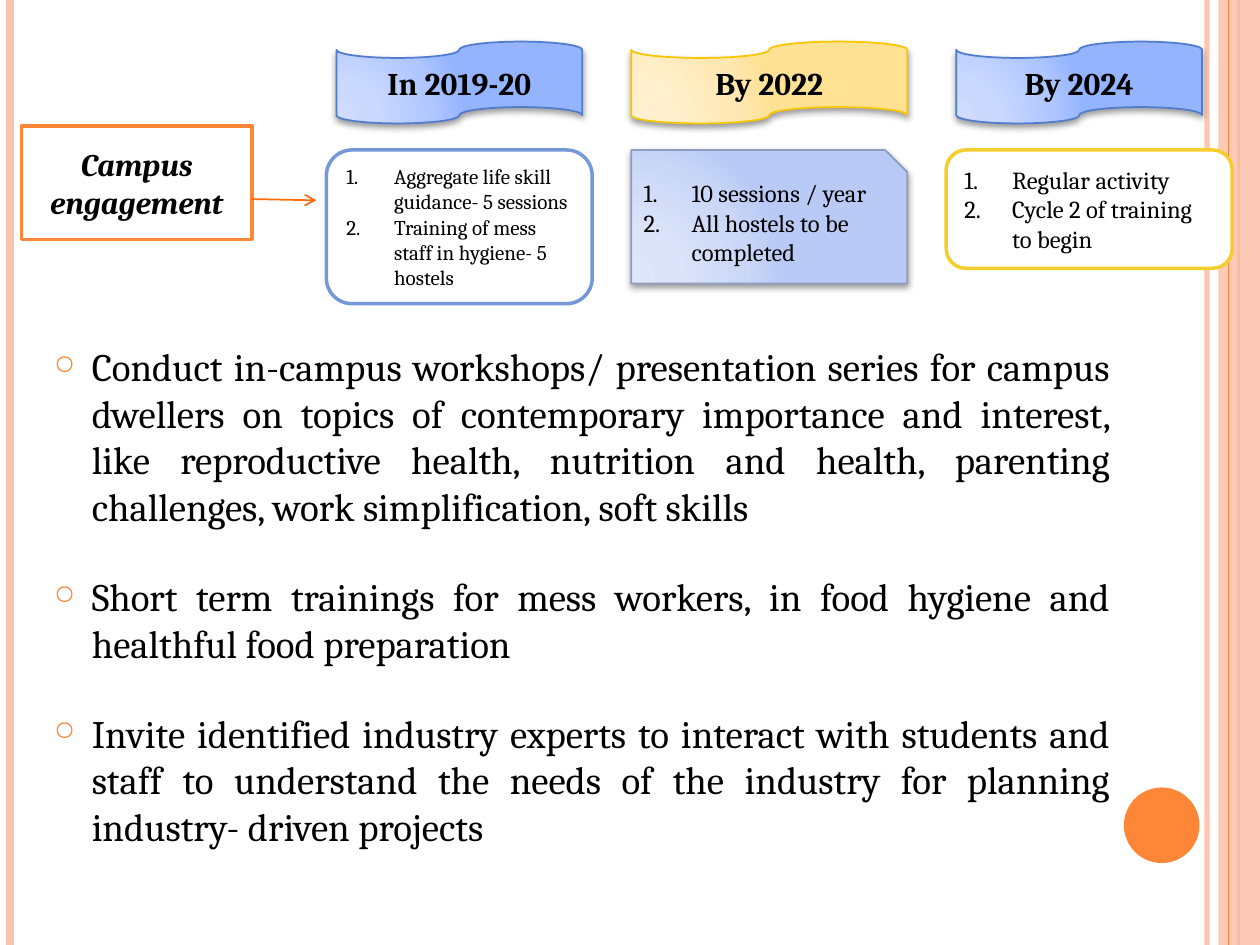
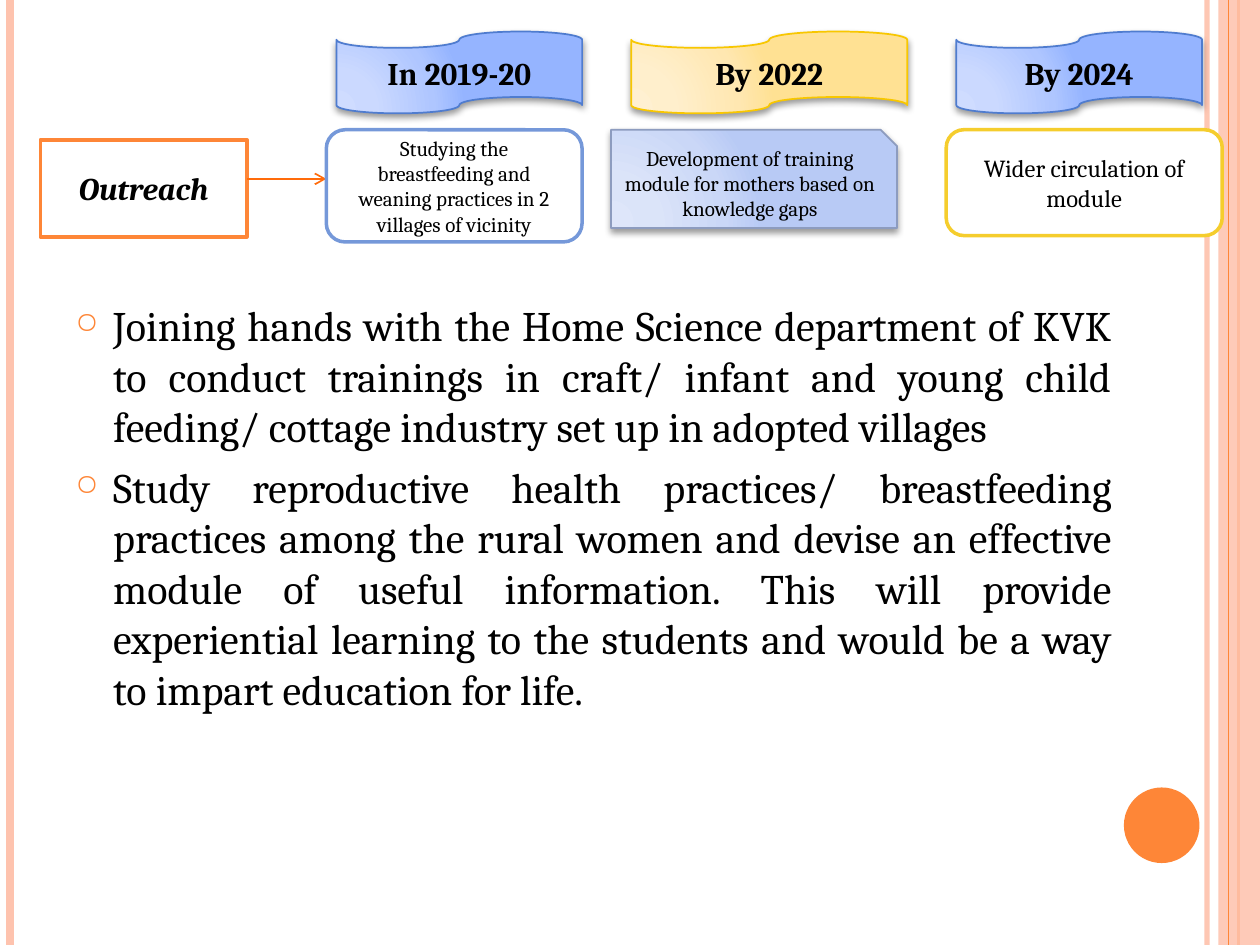
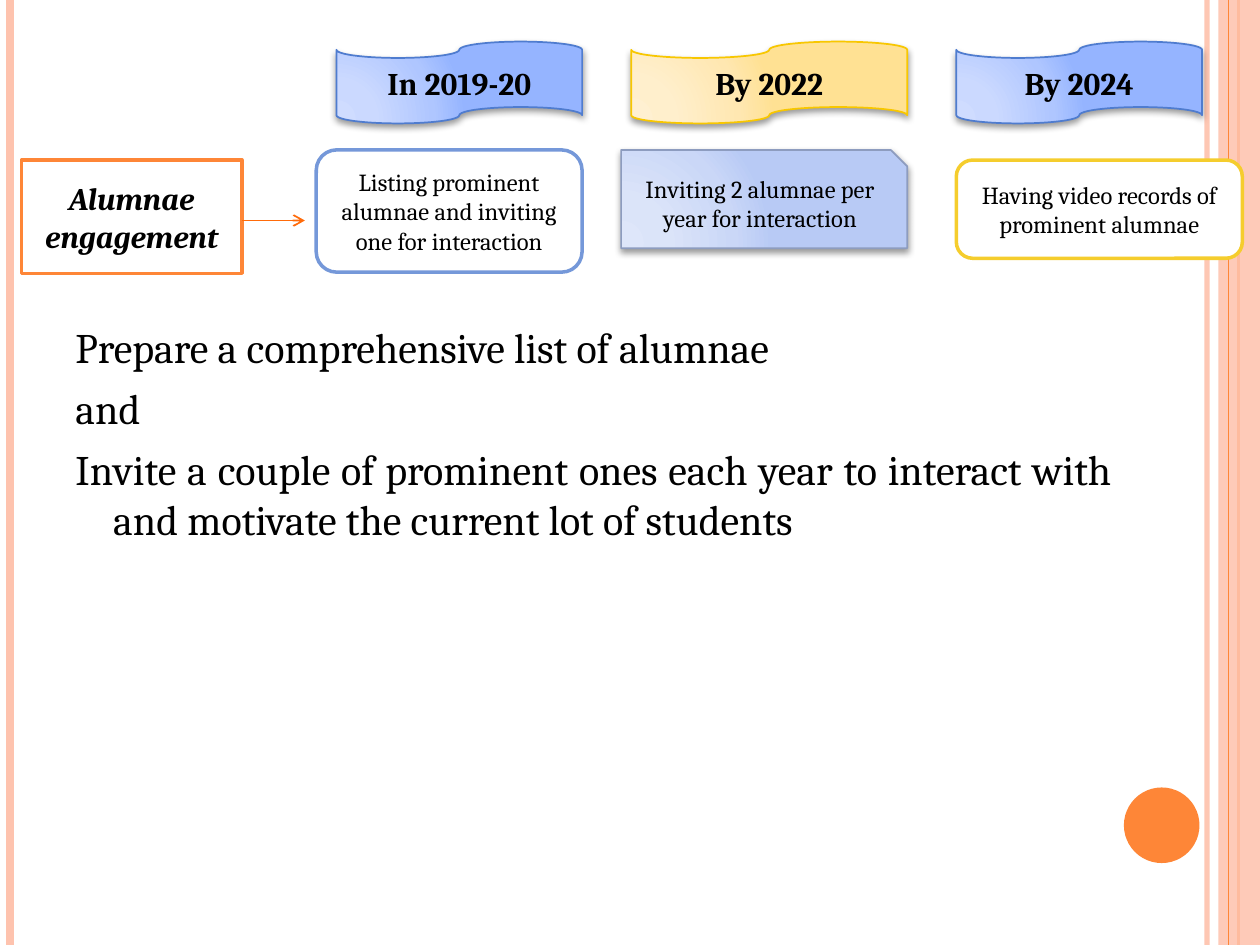
"""Build three slides of yearly plans: campus engagement, outreach, alumnae engagement."""
from lxml import etree
from pptx import Presentation
from pptx import util as u
from pptx.dml.color import RGBColor
from pptx.enum import shapes, text
from pptx.oxml import ns

PX = 9144
FONT = "Cambria"
BLACK, WHITE = "000000", "FFFFFF"
ORANGE, PEACH, ARROW = "FE8637", "FEC3AE", "FF6B0A"
GRADIENT_STOPS = (0, 30, 75, 100)
BLUE_TAPE = ("CFDCFF", "CBD9FF", "AFC6FF", "95B4FF")
GOLD_TAPE = ("FFF0D1", "FFEFCC", "FFE7B1", "FFE193")
BLUE_CARD = ("DEE6FA", "DBE4F9", "CAD7F7", "B8CAF5")
BANNERS = [
    ("In 2019-20", 267, 195, BLUE_TAPE, "4F7CCF"),
    ("By 2022", 501, 219, GOLD_TAPE, "F8C700"),
    ("By 2024", 759, 195, BLUE_TAPE, "4F7CCF"),
]
CARD_STYLES = [
    ("ROUNDED_RECTANGLE", WHITE, "7598D9", 2),
    ("SNIP_1_RECTANGLE", BLUE_CARD, "8D9CBF", 1),
    ("ROUNDED_RECTANGLE", WHITE, "F5CD2D", 2),
]


def px(*lengths):
    return [u.Emu(n * PX) for n in lengths]


def rgb(value):
    return RGBColor.from_string(value)


def add(parent, tag, **attrs):
    el = etree.SubElement(parent, ns.qn("a:" + tag))
    for name, value in attrs.items():
        el.set(name, str(value))
    return el


def add_alpha(parent, percent):
    color = next(parent.iter(ns.qn("a:srgbClr")))
    add(color, "alpha", val=percent * 1000)


def add_bullet(pPr, bullet):
    if bullet == "number":
        add(pPr, "buAutoNum", type="arabicPeriod")
    elif bullet:
        add(add(pPr, "buClr"), "srgbClr", val=ORANGE)
        add(pPr, "buSzPct", val=70000)
        add(pPr, "buChar", char=bullet)
    else:
        add(pPr, "buNone")


def put_text(tf, lines, size, align="CENTER", bold=False, italic=False,
             indent=0, bullet=None, before=0, gap=0):
    tf.word_wrap = True
    for i, line in enumerate(lines):
        p = tf.add_paragraph() if i else tf.paragraphs[0]
        p.alignment = getattr(text.PP_ALIGN, align)
        p.space_before = u.Pt(gap if i else before)
        pPr = p._p.get_or_add_pPr()
        if indent:
            pPr.set("marL", str(indent * PX))
            pPr.set("indent", str(-indent * PX))
        add_bullet(pPr, bullet)
        r = p.add_run()
        r.text = line
        r.font.name, r.font.size = FONT, u.Pt(size)
        r.font.bold, r.font.italic = bold, italic
        r.font.color.rgb = rgb(BLACK)


class Deck:
    """Hold the presentation, its style and the current slide."""

    def __init__(self):
        self.prs = Presentation()
        self.prs.slide_width, self.prs.slide_height = px(1000, 750)
        self.s = None

    def new_slide(self):
        self.s = self.prs.slides.add_slide(self.prs.slide_layouts[6])
        self.rule(958, PEACH, 3, alpha=93)
        self.rule(8, PEACH, 4.5)
        self.rule(983, ORANGE, 1.5)
        band = self.shape("RECTANGLE", (967, 0, 33, 750), PEACH)
        add_alpha(band._element.spPr, 87)
        self.rule(975, ORANGE, 0.75)
        self.shape("OVAL", (892, 625, 60, 60), ORANGE)

    def line(self, ends, color, width):
        c = self.s.shapes.add_connector(shapes.MSO_CONNECTOR.STRAIGHT, *px(*ends))
        c.line.color.rgb = rgb(color)
        c.line.width = u.Pt(width)
        add(c._element.spPr, "effectLst")
        return c

    def rule(self, x, color, width, alpha=100):
        c = self.line((x, 0, x, 750), color, width)
        if alpha < 100:
            add_alpha(c._element.spPr, alpha)

    def arrow(self, ends):
        c = self.line(ends, ARROW, 1)
        add(c._element.spPr.find(ns.qn("a:ln")), "tailEnd", type="arrow")

    def shape(self, kind, box, fill, line=None, width=1):
        sp = self.s.shapes.add_shape(getattr(shapes.MSO_SHAPE, kind), *px(*box))
        sp.shadow.inherit = False
        if line:
            sp.line.color.rgb = rgb(line)
            sp.line.width = u.Pt(width)
        else:
            sp.line.fill.background()
        if isinstance(fill, tuple):
            self.glow(sp, fill)
        else:
            sp.fill.solid()
            sp.fill.fore_color.rgb = rgb(fill)
        sp.text_frame.vertical_anchor = text.MSO_ANCHOR.MIDDLE
        return sp

    def glow(self, sp, colors):
        sp.fill.gradient()
        spPr = sp._element.spPr
        grad = spPr.find(ns.qn("a:gradFill"))
        for child in list(grad):
            grad.remove(child)
        stops = add(grad, "gsLst")
        for pos, color in zip(GRADIENT_STOPS, colors):
            add(add(stops, "gs", pos=pos * 1000), "srgbClr", val=color)
        circle = add(grad, "path", path="circle")
        add(circle, "fillToRect", l=5000, t=100000, r=120000, b=10000)
        shadow = add(spPr.find(ns.qn("a:effectLst")), "outerShdw",
                     blurRad=u.Pt(4), dist=u.Pt(2), dir=90 * 60000, rotWithShape=0)
        add(add(shadow, "srgbClr", val=BLACK), "alpha", val=40000)

    def body(self, box, lines, size=24, bullet="○", gap=6):
        tb = self.s.shapes.add_textbox(*px(*box))
        put_text(tb.text_frame, lines, size, align="JUSTIFY", indent=30,
                 bullet=bullet, before=6, gap=gap)

    def topic(self, box, title):
        sp = self.shape("RECTANGLE", box, WHITE, ORANGE, 2)
        put_text(sp.text_frame, [title], 18, bold=True, italic=True)

    def banners(self, top):
        for title, left, width, fill, line in BANNERS:
            sp = self.shape("FLOWCHART_PUNCHED_TAPE", (left, top, width, 65), fill, line)
            put_text(sp.text_frame, [title], 18, bold=True)

    def cards(self, cards):
        for (kind, fill, line, width), (box, size, lines) in zip(CARD_STYLES, cards):
            sp = self.shape(kind, box, fill, line, width)
            if len(lines) > 1:
                put_text(sp.text_frame, lines, size, align="LEFT", indent=38, bullet="number")
            else:
                put_text(sp.text_frame, lines, size)


PLANS = [
    {
        "topic": ((17, 100, 183, 90), "Campus engagement"),
        "banner_top": 33,
        "arrow": (200, 158, 251, 159),
        "cards": [
            ((259, 119, 211, 122), 12, ["Aggregate life skill guidance- 5 sessions",
                                        "Training of mess staff in hygiene- 5 hostels"]),
            ((501, 119, 219, 106), 14, ["10 sessions / year", "All hostels to be completed"]),
            ((751, 119, 227, 94), 14, ["Regular activity", "Cycle 2 of training to begin"]),
        ],
        "body": {
            "box": (33, 267, 858, 441), "size": 22.2, "gap": 24.8,
            "lines": [
                "Conduct in-campus workshops/ presentation series for campus dwellers on topics "
                "of contemporary importance and interest, like reproductive health, nutrition "
                "and health, parenting challenges, work simplification, soft skills",
                "Short term trainings for mess workers, in food hygiene and healthful food "
                "preparation",
                "Invite identified industry experts to interact with students and staff to "
                "understand the needs of the industry for planning industry- driven projects",
            ],
        },
    },
    {
        "topic": ((32, 111, 164, 77), "Outreach"),
        "banner_top": 25,
        "arrow": (196, 142, 259, 142),
        "cards": [
            ((259, 103, 203, 89), 12, ["Studying the breastfeeding and weaning practices "
                                       "in 2 villages of vicinity"]),
            ((485, 103, 227, 78), 12, ["Development of training module for mothers based "
                                       "on knowledge gaps"]),
            ((751, 103, 219, 84), 14, ["Wider circulation of module"]),
        ],
        "body": {
            "box": (50, 233, 842, 475),
            "lines": [
                "Joining hands with the Home Science department of KVK to conduct trainings in "
                "craft/ infant and young child feeding/ cottage industry set up in adopted "
                "villages",
                "Study reproductive health practices/ breastfeeding practices among the rural "
                "women and devise an effective module of useful information. This will provide "
                "experiential learning to the students and would be a way to impart education "
                "for life.",
            ],
        },
    },
    {
        "topic": ((17, 127, 175, 90), "Alumnae engagement"),
        "banner_top": 33,
        "arrow": (192, 175, 242, 175),
        "cards": [
            ((251, 119, 211, 97), 14, ["Listing prominent alumnae and inviting one for "
                                       "interaction"]),
            ((493, 119, 227, 78), 14, ["Inviting 2 alumnae per year for interaction"]),
            ((759, 127, 227, 78), 14, ["Having video records of prominent alumnae"]),
        ],
        "body": {
            "box": (50, 250, 842, 458), "bullet": None,
            "lines": [
                "Prepare a comprehensive list of alumnae",
                "and",
                "Invite a couple of prominent ones each year to interact with and motivate the "
                "current lot of students",
            ],
        },
    },
]


def main():
    deck = Deck()
    for plan in PLANS:
        deck.new_slide()
        deck.body(**plan["body"])
        deck.topic(*plan["topic"])
        deck.banners(plan["banner_top"])
        deck.arrow(plan["arrow"])
        deck.cards(plan["cards"])
    deck.prs.save("out.pptx")


if __name__ == "__main__":
    main()
